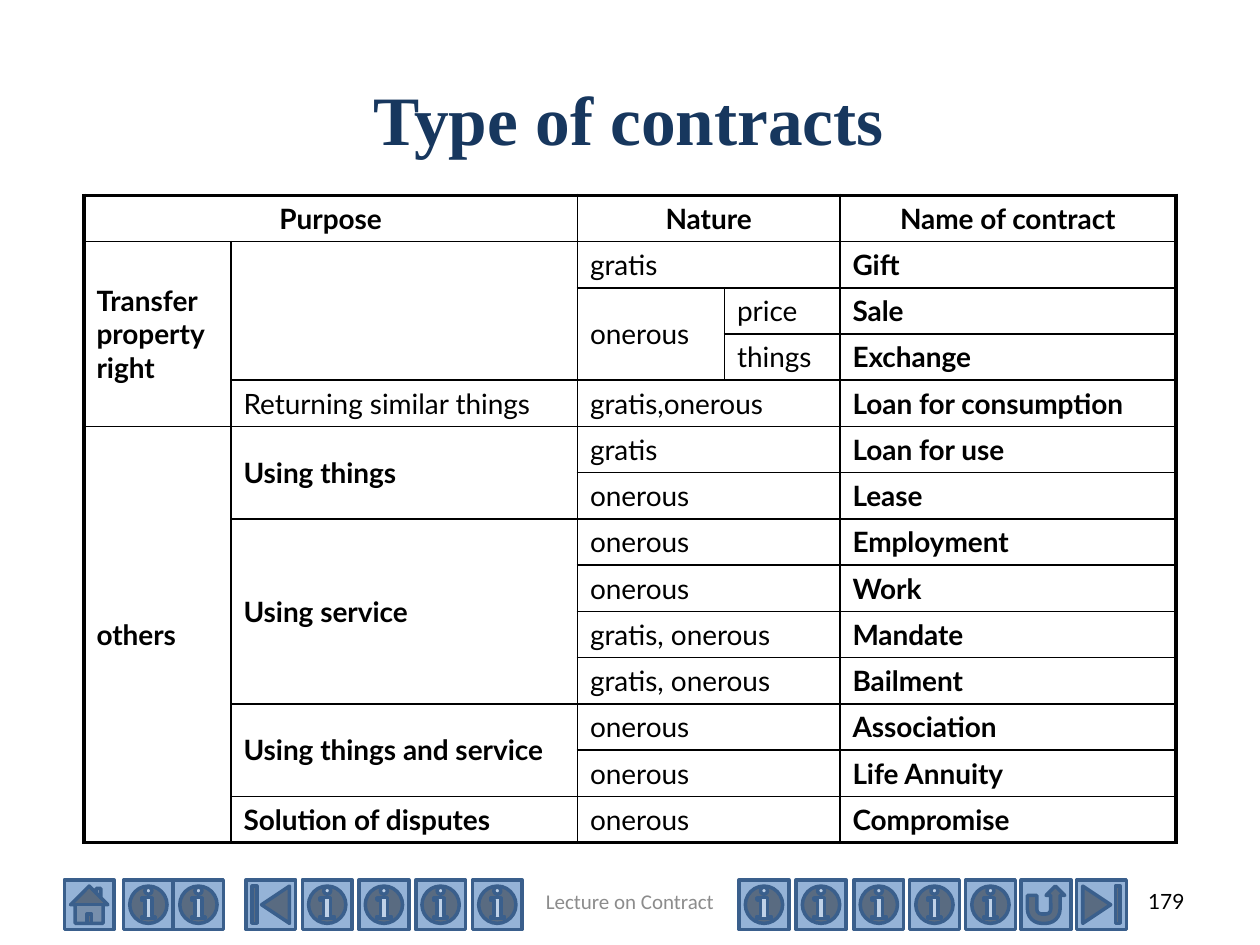
from dataclasses import dataclass

from lxml import etree
from pptx import Presentation
from pptx.dml.color import RGBColor
from pptx.enum.shapes import MSO_SHAPE as Shape
from pptx.enum.text import MSO_ANCHOR as Anchor, PP_ALIGN as Align
from pptx.oxml.ns import qn
from pptx.util import Pt


@dataclass(frozen=True)
class Theme:
    ink: str = "000000"
    title: str = "17375E"
    footer: str = "8C8C8C"
    button: str = "95B3D7"
    button_line: str = "3A5F8C"
    body_font: str = "Lato"
    title_font: str = "Times New Roman"
    footer_font: str = "Calibri"
    title_size: float = 39.6
    table_size: float = 16
    footer_size: float = 12
    inner_line: float = 1
    outer_line: float = 2.25
    button_line_width: float = 2


T = Theme()

# Content
TITLE = "Type of contracts"
FOOTER = "Lecture on Contract"
PAGE = "179"

HEADERS = [(0, 2, "Purpose"), (2, 2, "Nature"), (4, 1, "Name of contract")]  # column, span, text
PURPOSES = [  # row, column, row span, text, bold
    (1, 0, 4, "Transfer property right", True),
    (1, 1, 3, "", False),
    (4, 1, 1, "Returning similar things", False),
    (5, 0, 9, "others", True),
    (5, 1, 2, "Using things", True),
    (7, 1, 4, "Using service", True),
    (11, 1, 2, "Using things and service", True),
    (13, 1, 1, "Solution of disputes", True),
]
CONTRACTS = [  # nature, name
    ("gratis", "Gift"),
    (("onerous", "price"), "Sale"),
    ((None, "things"), "Exchange"),
    ("gratis,onerous", "Loan for consumption"),
    ("gratis", "Loan for use"),
    ("onerous", "Lease"),
    ("onerous", "Employment"),
    ("onerous", "Work"),
    ("gratis, onerous", "Mandate"),
    ("gratis, onerous", "Bailment"),
    ("onerous", "Association"),
    ("onerous", "Life Annuity"),
    ("onerous", "Compromise"),
]
BUTTONS = [  # shape, left edges
    (Shape.ACTION_BUTTON_HOME, [36.8]),
    (Shape.ACTION_BUTTON_BEGINNING, [140.6]),
    (Shape.ACTION_BUTTON_INFORMATION,
     [70.6, 99.2, 172.8, 205.2, 237.6, 270, 422.4, 455, 488, 519.8, 551.8]),
    (Shape.ACTION_BUTTON_RETURN, [583.6]),
    (Shape.ACTION_BUTTON_END, [615.2]),
]

# Layout
COLUMNS = [84, 198, 84, 66, 192]
ROW_HEIGHT = 26.4
ROWS = len(CONTRACTS) + 1
TABLE_LEFT, TABLE_TOP = 48, 111.6
BUTTON_TOP, BUTTON_SIZE = 502.8, 28.4
FOOTER_TOP, FOOTER_HEIGHT = 500.4, 28.8


def rgb(color):
    return RGBColor.from_string(color)


def write(tf, text, font, size, color, align, bold=False):
    tf.text = text
    p = tf.paragraphs[0]
    p.alignment = align
    for r in p.runs:
        r.font.name, r.font.size, r.font.bold = font, Pt(size), bold
        r.font.color.rgb = rgb(color)


def add_label(s, box, *style, **options):
    tf = s.shapes.add_textbox(*map(Pt, box)).text_frame
    tf.word_wrap = True
    tf.vertical_anchor = Anchor.MIDDLE
    write(tf, *style, **options)


def set_borders(cell, widths):
    """Draw the sides given as (tag, width), ahead of the cell's fill."""
    tcPr = cell._tc.get_or_add_tcPr()
    for i, (tag, width) in enumerate(widths):
        ln = etree.Element(qn(f"a:{tag}"), w=str(Pt(width)))
        fill = etree.SubElement(ln, qn("a:solidFill"))
        etree.SubElement(fill, qn("a:srgbClr"), val=T.ink)
        tcPr.insert(i, ln)


def fill_region(table, row, col, row_span, col_span, text, bold, align=Align.LEFT):
    """Merge a block of cells, write its text and outline it."""
    last_row, last_col = row + row_span - 1, col + col_span - 1
    origin = table.cell(row, col)
    if row_span * col_span > 1:
        origin.merge(table.cell(last_row, last_col))
    origin.vertical_anchor = Anchor.MIDDLE
    write(origin.text_frame, text, T.body_font, T.table_size, T.ink, align, bold)

    outer = {"lnL": col == 0, "lnR": last_col == len(COLUMNS) - 1,
             "lnT": row == 0, "lnB": last_row == ROWS - 1}
    for r in range(row, last_row + 1):
        for c in range(col, last_col + 1):
            edge = {"lnL": c == col, "lnR": c == last_col,
                    "lnT": r == row, "lnB": r == last_row}
            cell = table.cell(r, c)
            cell.fill.background()
            set_borders(cell, [(tag, T.outer_line if outer[tag] else T.inner_line)
                               for tag in edge if edge[tag] or (r, c) == (row, col)])


def add_contract_table(s):
    table = s.shapes.add_table(ROWS, len(COLUMNS), Pt(TABLE_LEFT), Pt(TABLE_TOP),
                               Pt(sum(COLUMNS)), Pt(ROW_HEIGHT * ROWS)).table
    table.first_row = table.horz_banding = False
    for column, width in zip(table.columns, COLUMNS):
        column.width = Pt(width)
    for row in table.rows:
        row.height = Pt(ROW_HEIGHT)

    for col, span, text in HEADERS:
        fill_region(table, 0, col, 1, span, text, True, Align.CENTER)
    for row, col, span, text, bold in PURPOSES:
        fill_region(table, row, col, span, 1, text, bold)
    for row, (nature, name) in enumerate(CONTRACTS, 1):
        if isinstance(nature, str):
            fill_region(table, row, 2, 1, 2, nature, False)
        else:
            kind, detail = nature
            if kind:
                fill_region(table, row, 2, 2, 1, kind, False)
            fill_region(table, row, 3, 1, 1, detail, False)
        fill_region(table, row, 4, 1, 1, name, True)


def add_buttons(s):
    for shape, lefts in BUTTONS:
        for left in lefts:
            sp = s.shapes.add_shape(shape, Pt(left), Pt(BUTTON_TOP),
                                    Pt(BUTTON_SIZE), Pt(BUTTON_SIZE))
            sp.shadow.inherit = False
            sp.fill.solid()
            sp.fill.fore_color.rgb = rgb(T.button)
            sp.line.color.rgb = rgb(T.button_line)
            sp.line.width = Pt(T.button_line_width)


def main():
    prs = Presentation()
    prs.slide_width, prs.slide_height = Pt(720), Pt(540)
    s = prs.slides.add_slide(prs.slide_layouts[6])

    # Navigation bar
    add_buttons(s)
    add_label(s, (516, FOOTER_TOP, 168, FOOTER_HEIGHT), PAGE,
              T.body_font, T.footer_size, T.ink, Align.RIGHT)

    # Title and table
    add_label(s, (52.4, 37.6, 613.6, 59), TITLE,
              T.title_font, T.title_size, T.title, Align.CENTER, bold=True)
    add_contract_table(s)

    # Footer
    add_label(s, (246, FOOTER_TOP, 228, FOOTER_HEIGHT), FOOTER,
              T.footer_font, T.footer_size, T.footer, Align.CENTER)
    prs.save("out.pptx")


if __name__ == "__main__":
    main()
